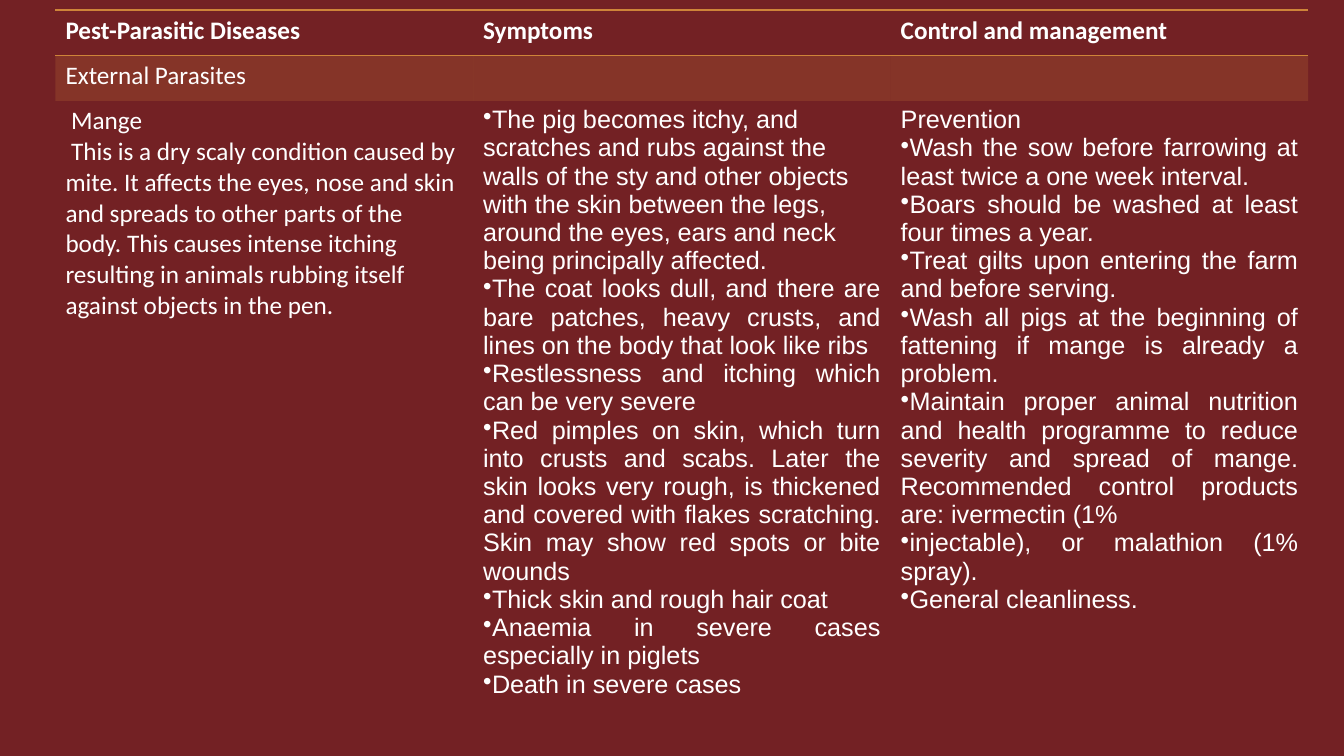
from dataclasses import dataclass

from lxml.etree import SubElement
from pptx import Presentation
from pptx.dml.color import RGBColor
from pptx.enum.text import PP_ALIGN as Align
from pptx.oxml import parse_xml
from pptx.oxml.ns import nsdecls, qn
from pptx.table import _Cell as Cell
from pptx.util import Pt

MAROON = RGBColor(0x73, 0x21, 0x24)
OCHRE = RGBColor(0xCE, 0x84, 0x39)
WHITE = RGBColor(0xFF, 0xFF, 0xFF)
NO_STYLE = "{2D5ABB26-0587-4C30-8999-92F81FD0307C}"
COLUMN_WIDTH = Pt(298.3)
ROW_HEIGHTS = [Pt(32.4), Pt(32.4), Pt(520.6)]


@dataclass
class Line:
    text: str
    font: str = "Arial"
    bold: bool = False
    bullet: bool = False
    justified: bool = False
    indent: float = 0


def heading(text: str) -> list[Line]:
    return [Line(text, "Calibri", bold=True)]


def point(text: str, justified: bool = True) -> Line:
    return Line(text, bullet=True, justified=justified)


DISEASE = [
    Line("Mange", "Calibri", indent=4),
    Line("This is a dry scaly condition caused by mite. It affects the eyes, nose and skin "
         "and spreads to other parts of the body. This causes intense itching resulting in "
         "animals rubbing itself against objects in the pen.", "Calibri", indent=4),
]
SYMPTOMS = [
    point("The pig becomes itchy, and scratches and rubs against the walls of the sty and "
          "other objects with the skin between the legs, around the eyes, ears and neck "
          "being principally affected.", justified=False),
    point("The coat looks dull, and there are bare patches, heavy crusts, and lines on the "
          "body that look like ribs"),
    point("Restlessness and itching which can be very severe"),
    point("Red pimples on skin, which turn into crusts and scabs. Later the skin looks very "
          "rough, is thickened and covered with flakes scratching. Skin may show red spots "
          "or bite wounds"),
    point("Thick skin and rough hair coat"),
    point("Anaemia in severe cases especially in piglets"),
    point("Death in severe cases"),
]
CONTROL = [
    Line("Prevention"),
    point("Wash the sow before farrowing at least twice a one week interval."),
    point("Boars should be washed at least four times a year."),
    point("Treat gilts upon entering the farm and before serving."),
    point("Wash all pigs at the beginning of fattening if mange is already a problem."),
    point("Maintain proper animal nutrition and health programme to reduce severity and "
          "spread of mange. Recommended control products are: ivermectin (1%"),
    point("injectable), or malathion (1% spray)."),
    point("General cleanliness."),
]
ROWS = [
    [heading("Pest-Parasitic Diseases"), heading("Symptoms"), heading("Control and management")],
    [[Line("External Parasites", "Calibri")], [], []],
    [DISEASE, SYMPTOMS, CONTROL],
]


def write_lines(cell: Cell, lines: list[Line]) -> None:
    frame = cell.text_frame
    frame.text = "\n".join(line.text for line in lines)
    for paragraph, line in zip(frame.paragraphs, lines):
        properties = paragraph._p.get_or_add_pPr()
        if line.indent:
            properties.set("indent", str(Pt(line.indent)))
        if line.bullet:
            SubElement(properties, qn("a:buChar")).set("char", "•")
        if line.justified:
            paragraph.alignment = Align.JUSTIFY
        for run in paragraph.runs:
            run.font.name = line.font
            run.font.size = Pt(18)
            run.font.bold = line.bold
            run.font.color.rgb = WHITE


def fill_band(cell: Cell) -> None:
    """Give the cell a mostly transparent ochre fill."""
    cell.fill.solid()
    cell.fill.fore_color.rgb = OCHRE
    color = cell._tc.tcPr.find(".//" + qn("a:srgbClr"))
    SubElement(color, qn("a:alpha")).set("val", "20000")


def rule_above_and_below(cell: Cell) -> None:
    properties = cell._tc.get_or_add_tcPr()
    for position, tag in enumerate(("lnT", "lnB")):
        border = parse_xml(
            f'<a:{tag} {nsdecls("a")} w="{Pt(1)}"><a:solidFill>'
            f'<a:srgbClr val="{OCHRE}"/></a:solidFill></a:{tag}>')
        properties.insert(position, border)


def main() -> None:
    presentation = Presentation()
    presentation.slide_width, presentation.slide_height = Pt(960), Pt(540)
    slide = presentation.slides.add_slide(presentation.slide_layouts[6])
    slide.background.fill.solid()
    slide.background.fill.fore_color.rgb = MAROON

    table = slide.shapes.add_table(
        len(ROWS), 3, Pt(39.6), Pt(7.2), 3 * COLUMN_WIDTH, sum(ROW_HEIGHTS)).table
    table._tbl.tblPr.find(qn("a:tableStyleId")).text = NO_STYLE
    table.horz_banding = False
    for column in table.columns:
        column.width = COLUMN_WIDTH
    for row_index, (row, height, contents) in enumerate(zip(table.rows, ROW_HEIGHTS, ROWS)):
        row.height = height
        for cell, lines in zip(row.cells, contents):
            write_lines(cell, lines)
            if row_index == 1:
                fill_band(cell)
            else:
                cell.fill.background()
            if row_index == 0:
                rule_above_and_below(cell)

    presentation.save("out.pptx")


if __name__ == "__main__":
    main()
